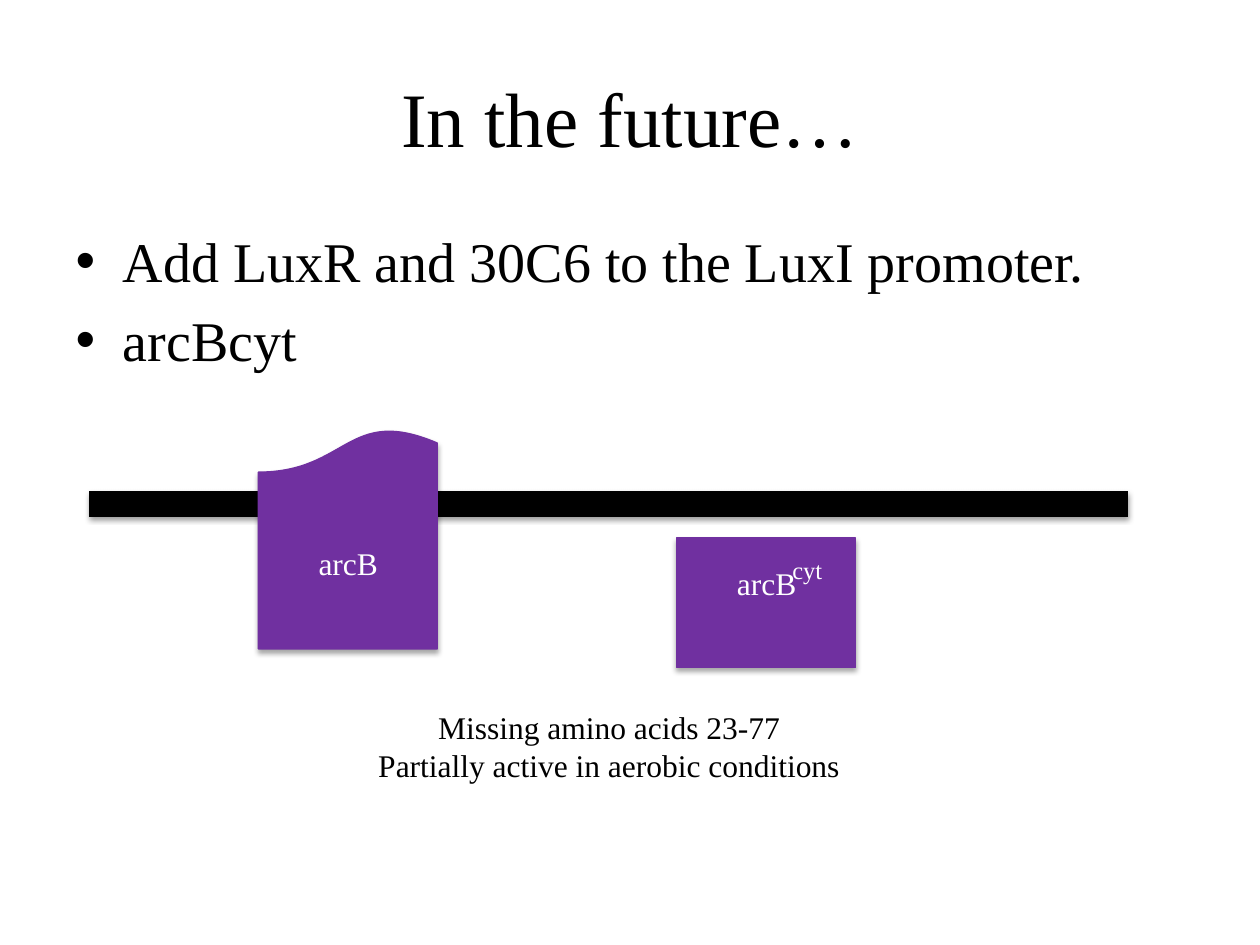
from dataclasses import dataclass

from lxml import etree
from pptx import Presentation
from pptx import util as u
from pptx.dml.color import RGBColor
from pptx.enum import shapes, text
from pptx.oxml.ns import qn

CENTER = text.PP_ALIGN.CENTER
LEFT = text.PP_ALIGN.LEFT


@dataclass(frozen=True)
class Theme:
    font: str = "Times New Roman"
    ink: str = "000000"
    gene: str = "7030A0"
    label: str = "FFFFFF"
    title_size: float = 44
    body_size: float = 32
    note_size: float = 18
    super_size: float = 14
    strand_width: float = 14.5
    outline_width: float = 0.75


class Deck:
    """Holds the style and the current slide."""

    def __init__(self, theme):
        self.theme = theme
        self.prs = Presentation()
        self.prs.slide_width = u.Inches(10)
        self.prs.slide_height = u.Inches(7.5)
        self.s = self.prs.slides.add_slide(self.prs.slide_layouts[1])

    def box(self, *lengths):
        return [u.Inches(v) for v in lengths]

    def place(self, sp, at):
        for name, value in zip(("left", "top", "width", "height"), self.box(*at)):
            setattr(sp, name, value)

    def fill_text(self, tf, lines, size, color, align):
        tf.word_wrap = True
        for i, line in enumerate(lines):
            p = tf.paragraphs[0] if i == 0 else tf.add_paragraph()
            p.alignment = align
            r = p.add_run()
            r.text = line
            for name, value in {"name": self.theme.font, "size": u.Pt(size)}.items():
                setattr(r.font, name, value)
            r.font.color.rgb = RGBColor.from_string(color)

    def title(self, line, at):
        sp = self.s.shapes.title
        self.place(sp, at)
        self.fill_text(sp.text_frame, [line], self.theme.title_size, self.theme.ink, CENTER)

    def bullets(self, lines, at):
        sp = self.s.placeholders[1]
        self.place(sp, at)
        self.fill_text(sp.text_frame, lines, self.theme.body_size, self.theme.ink, LEFT)
        sp.text_frame.paragraphs[0].space_before = u.Pt(0)

    def group(self):
        return self.s.shapes.add_group_shape().shapes

    def shadow(self, effects, dist, alpha):
        """Fill an effect list with a soft shadow that falls straight down."""
        outer = etree.SubElement(effects, qn("a:outerShdw"), blurRad=str(u.Pt(3.1)),
                                 dist=str(u.Pt(dist)), dir="5400000", rotWithShape="0")
        color = etree.SubElement(outer, qn("a:srgbClr"), val=self.theme.ink)
        etree.SubElement(color, qn("a:alpha"), val=str(alpha * 1000))

    def strand(self, parent, x1, x2, y):
        line = parent.add_connector(shapes.MSO_CONNECTOR.STRAIGHT, *self.box(x1, y, x2, y))
        line.line.color.rgb = RGBColor.from_string(self.theme.ink)
        line.line.width = u.Pt(self.theme.strand_width)
        effects = etree.SubElement(line._element.spPr, qn("a:effectLst"))
        self.shadow(effects, 1.6, 38)

    def gene(self, parent, kind, at, rotation=0):
        sp = parent.add_shape(kind, *self.box(*at))
        sp.rotation = rotation
        color = RGBColor.from_string(self.theme.gene)
        sp.fill.solid()
        sp.fill.fore_color.rgb = color
        sp.line.color.rgb = color
        sp.line.width = u.Pt(self.theme.outline_width)
        sp.shadow.inherit = False
        self.shadow(sp._element.spPr.find(qn("a:effectLst")), 1.8, 35)

    def label(self, parent, lines, at, size, color, align=LEFT):
        tf = parent.add_textbox(*self.box(*at)).text_frame
        self.fill_text(tf, lines, size, color, align)
        tf.auto_size = text.MSO_AUTO_SIZE.SHAPE_TO_FIT_TEXT


def main():
    theme = Theme()
    deck = Deck(theme)

    # Title and list
    deck.title("In the future…", (0.5, 0.3, 9, 1.25))
    deck.bullets(["Add LuxR and 30C6 to the LuxI promoter.", "arcBcyt"],
                 (0.5, 1.75, 9, 4.95))

    # Membrane with the full and the shortened protein
    diagram = deck.group()
    deck.strand(diagram, 0.71, 8.95, 4)
    deck.gene(diagram, shapes.MSO_SHAPE.FLOWCHART_DOCUMENT, (2.05, 3.4, 1.42, 1.75), 180)
    deck.gene(diagram, shapes.MSO_SHAPE.RECTANGLE, (5.37, 4.27, 1.42, 1.03))

    # Protein names
    for name, at, size in (
        ("arcB", (2.43, 4.27, 0.84, 0.4), theme.note_size),
        ("arcB", (5.75, 4.43, 0.74, 0.4), theme.note_size),
        ("cyt", (6.19, 4.36, 0.6, 0.34), theme.super_size),
    ):
        deck.label(diagram, [name], at, size, theme.label)

    # Caption
    deck.label(deck.s.shapes,
               ["Missing amino acids 23-77", "Partially active in aerobic conditions"],
               (2.65, 5.57, 4.37, 0.71), theme.note_size, theme.ink, CENTER)

    deck.prs.save("out.pptx")


if __name__ == "__main__":
    main()
